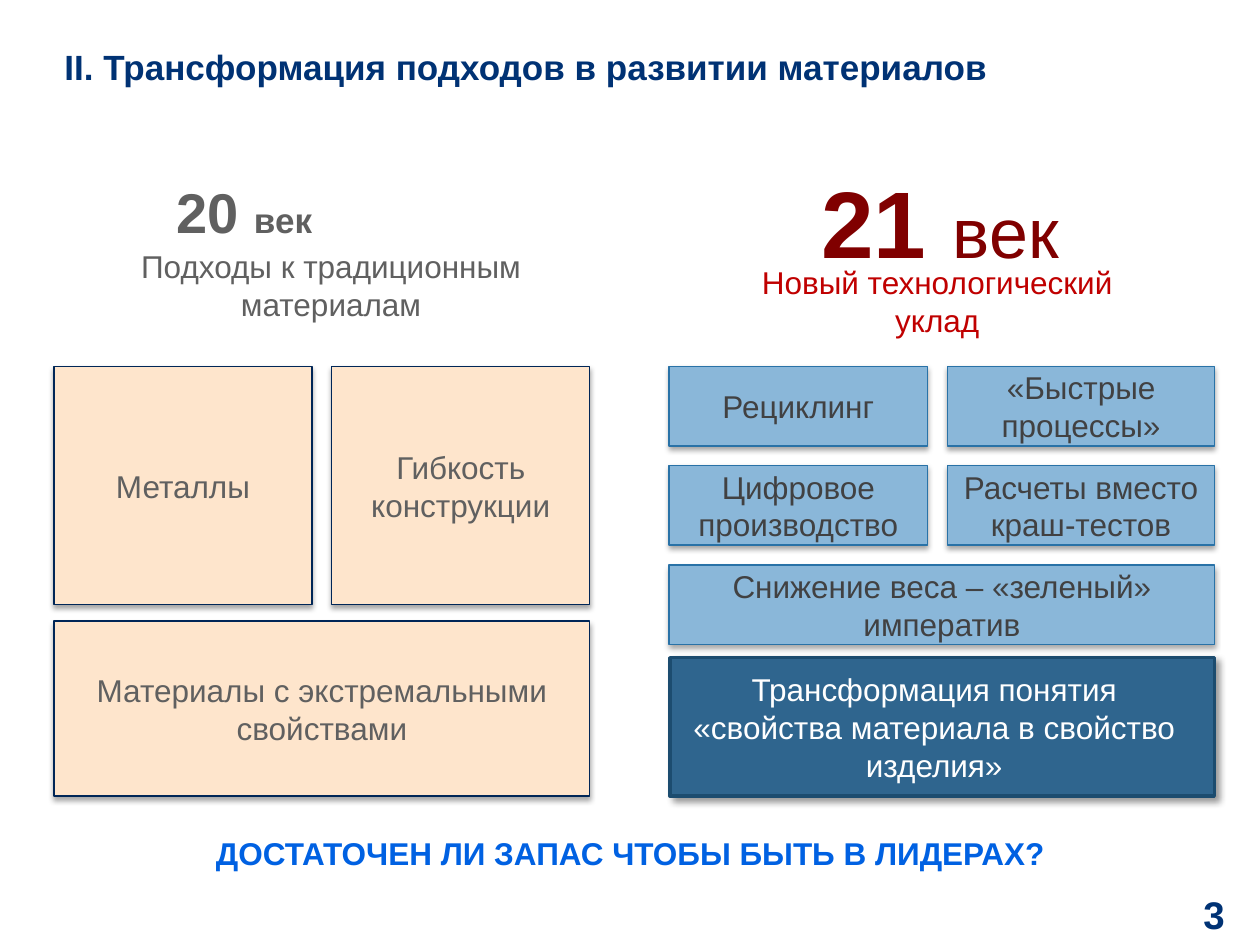
from lxml import etree
from pptx import Presentation
from pptx.dml.color import RGBColor
from pptx.enum.shapes import MSO_SHAPE as Shape
from pptx.enum.text import MSO_ANCHOR as Anchor, PP_ALIGN as Align
from pptx.oxml import parse_xml
from pptx.oxml.ns import nsdecls, qn
from pptx.util import Cm, Pt

NAVY, GREY, DARK = "003274", "606060", "414142"
GAP = 0.4
SOFT = (35, 3.1, 1.8, 90)
DEEP = (40, 4, 3, 45)


def color(code):
    return RGBColor.from_string(code)


def style(run, size, code, bold=False):
    font = run.font
    font.name, font.size, font.bold = "Arial", Pt(size), bold
    font.color.rgb = color(code)


def label(slide, box, parts, code, align=Align.CENTER, wrap=True,
          anchor=Anchor.TOP, inset=True):
    """Add a text box; parts holds (text, size, bold) for each run."""
    frame = slide.shapes.add_textbox(*map(Cm, box)).text_frame
    frame.word_wrap, frame.vertical_anchor = wrap, anchor
    if not inset:
        frame.margin_left = frame.margin_right = 0
        frame.margin_top = frame.margin_bottom = 0
    par = frame.paragraphs[0]
    par.alignment = align
    for text, size, bold in parts:
        run = par.add_run()
        run.text = text
        style(run, size, code, bold)


def shade(shape, alpha, blur, dist, angle):
    """Replace the theme shadow with an outer one."""
    shape.shadow.inherit = False
    effects = shape._element.spPr.find(qn("a:effectLst"))
    outer = parse_xml(
        f'<a:outerShdw {nsdecls("a")} blurRad="{Pt(blur)}" dist="{Pt(dist)}" '
        f'dir="{angle * 60000}" rotWithShape="0"/>')
    tint = etree.SubElement(outer, qn("a:srgbClr"), val="000000")
    etree.SubElement(tint, qn("a:alpha"), val=str(alpha * 1000))
    effects.append(outer)


def block(slide, box, fill, edge, text="", code=GREY, width=0.75, shadow=SOFT):
    shape = slide.shapes.add_shape(Shape.RECTANGLE, *map(Cm, box))
    shape.fill.solid()
    shape.fill.fore_color.rgb = color(fill)
    shape.line.color.rgb = color(edge)
    shape.line.width = Pt(width)
    shade(shape, *shadow)
    if text:
        frame = shape.text_frame
        frame.text = text
        frame.word_wrap, frame.vertical_anchor = True, Anchor.MIDDLE
        par = frame.paragraphs[0]
        par.alignment = Align.CENTER
        style(par.runs[0], 18, code)


def old_age(slide, x, y, w):
    # Heading of the 20th century
    label(slide, (x + 0.91, y + 1.65, 9.35, 1.8),
          [("Подходы к традиционным материалам", 18, False)], GREY)
    label(slide, (x + 2.21, y + 0.25, 3.3, 1.63),
          [("20 ", 32, True), ("век", 20, True)], GREY, Align.LEFT, False)
    # Two tall blocks over a wide one
    look = "FEE5CC", "002657"
    top, half = y + 4.19, (w - GAP) / 2
    for i, text in enumerate(("Металлы", "Гибкость конструкции")):
        block(slide, (x + i * (half + GAP), top, half, 4.8), *look, text)
    block(slide, (x, top + 5.13, w, 3.53), *look,
          "Материалы с экстремальными свойствами")


def new_age(slide, x, y, w):
    # Heading of the 21st century
    label(slide, (x + 0.81, y + 1.98, 9.19, 1.8),
          [("Новый технологический уклад", 18, False)], "C00000")
    label(slide, (x + 2.82, y - 0.02, 5.54, 2.57),
          [("21 ", 54, True), ("век", 40, False)], "800000", Align.LEFT, False)
    # Rows of blue blocks
    look = "8AB7D9", "2972A7"
    top, high, first = y + 4.19, 1.6, 5.21
    rows = (("Рециклинг", "«Быстрые процессы»"),
            ("Цифровое производство", "Расчеты вместо краш-тестов"),
            ("Снижение веса – «зеленый» императив",))
    for i, row in enumerate(rows):
        level = top + i * (high + GAP)
        if len(row) == 1:
            block(slide, (x, level, w, high), *look, row[0], DARK)
            continue
        left, right = row
        second = x + first + GAP
        block(slide, (x, level, first, high), *look, left, DARK)
        block(slide, (second, level, x + w - second, high), *look, right, DARK)
    # Conclusion
    block(slide, (x + 0.02, y + 10.06, w - 0.03, 2.79), "2F658E", "1C4C6F",
          width=2, shadow=DEEP)
    label(slide, (x + 0.15, y + 10.19, 10.39, 2.57),
          [("Трансформация понятия «свойства материала в свойство изделия»",
            18, False)], "FFFFFF")


def frame_text(slide):
    # Title, closing question and page number
    label(slide, (1.3, 0, 21.2, 2.67),
          [("II. Трансформация подходов в развитии материалов", 20, True)],
          NAVY, Align.LEFT, anchor=Anchor.MIDDLE, inset=False)
    label(slide, (1.09, 16.69, 23.24, 1.02),
          [("ДОСТАТОЧЕН ЛИ ЗАПАС ЧТОБЫ БЫТЬ В ЛИДЕРАХ?", 18, True)], "0061E2")
    label(slide, (22.94, 17.91, 1.75, 1.04), [("3", 22, True)], NAVY,
          Align.RIGHT, anchor=Anchor.MIDDLE, inset=False)


def main():
    deck = Presentation()
    deck.slide_width, deck.slide_height = Cm(25.4), Cm(19.05)
    slide = deck.slides.add_slide(deck.slide_layouts[6])
    frame_text(slide)
    old_age(slide, 1.09, 3.2, 10.8)
    new_age(slide, 13.49, 3.2, 11)
    deck.save("out.pptx")


if __name__ == "__main__":
    main()
